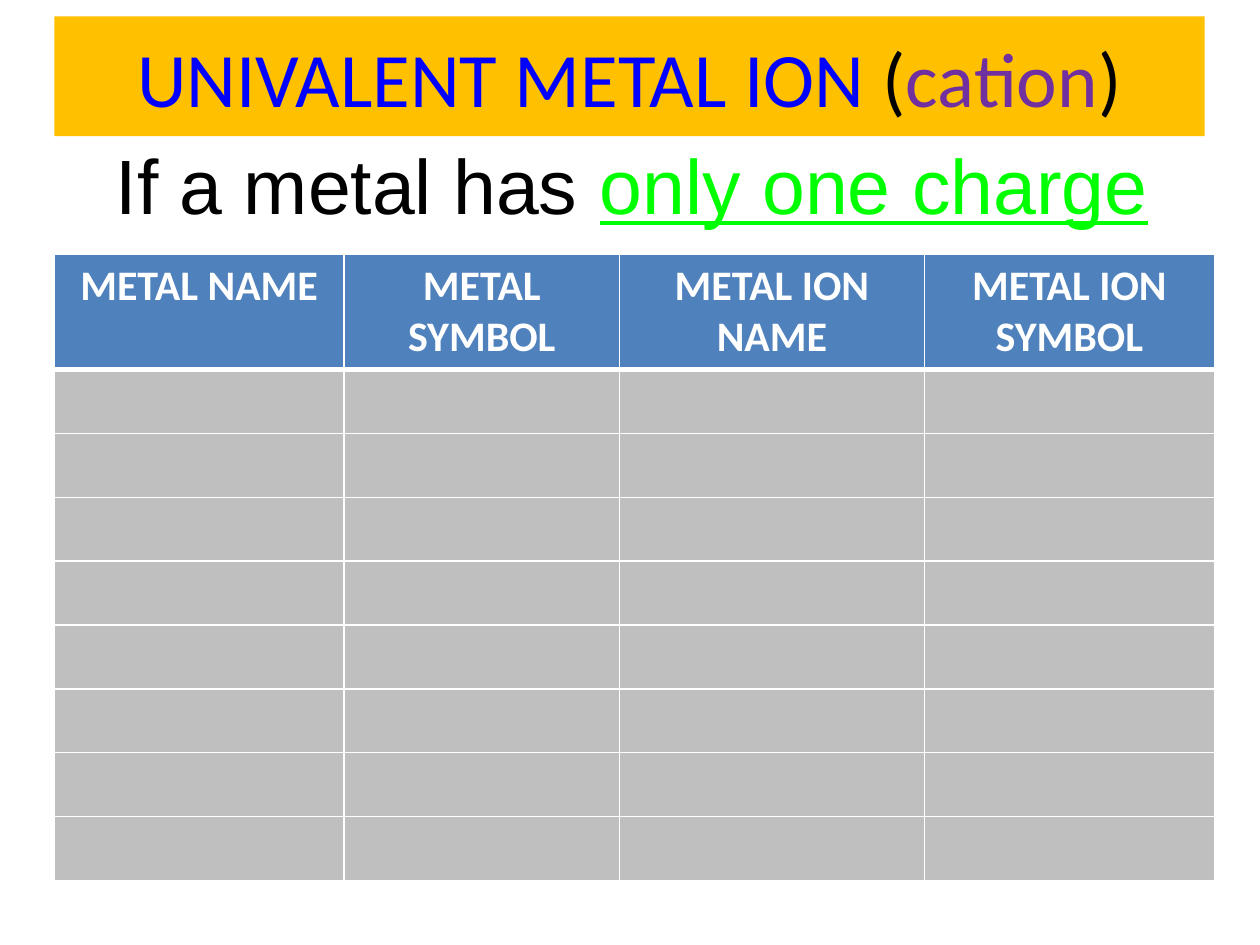
from pptx import Presentation
from pptx.dml.color import RGBColor
from pptx.enum.text import MSO_ANCHOR, PP_ALIGN
from pptx.oxml import parse_xml
from pptx.oxml.ns import nsdecls
from pptx.util import Pt

CENTER = PP_ALIGN.CENTER
MIDDLE = MSO_ANCHOR.MIDDLE
TITLE_ONLY = 5

# Content
TITLE = [("UNIVALENT METAL ION ", "blue"), ("(", "black"),
         ("cation", "purple"), (")", "black")]
STATEMENT = [("If a metal has ", "black", False),
             ("only one charge", "green", True)]
HEADERS = ["METAL NAME", "METAL SYMBOL", "METAL ION NAME", "METAL ION SYMBOL"]
BLANK_ROWS = 8

THEME = {
    "blue": "0000FF", "black": "000000", "purple": "7030A0", "green": "00FF00",
    "white": "FFFFFF", "banner": "FFC000", "header": "4F81BD", "blank": "BFBFBF",
    "heading_font": "Calibri", "statement_font": "Arial",
    "large": 44, "table_size": 24,
}

# Layout, in points
LEFT = 31
TITLE_BOX = (LEFT, 9.4, 657.4, 68.4)
STATEMENT_BOX = (0, 72, 718.6, 66.2)
TABLE_TOP = 145.4
COLUMN_WIDTHS = [165.6, 157.4, 174.2, 165.8]
HEADER_HEIGHT, BLANK_HEIGHT = 65.2, 36.5


def color(name):
    return RGBColor.from_string(THEME[name])


def add_text(para, text, *, font, size, fill, bold=False, underline=False):
    para.alignment = CENTER
    span = para.add_run()
    span.text = text
    span.font.name = THEME[font]
    span.font.size = Pt(THEME[size])
    span.font.bold = bold
    span.font.underline = underline
    span.font.color.rgb = color(fill)


def place(shape, box):
    shape.left, shape.top, shape.width, shape.height = map(Pt, box)


def fill_cell(cell, fill, bottom_width=1, top_width=1):
    """Border lines must come before the fill in the cell properties."""
    properties = cell._tc.get_or_add_tcPr()
    widths = {"lnL": 1, "lnR": 1, "lnT": top_width, "lnB": bottom_width}
    for side, width in widths.items():
        properties.append(parse_xml(
            f'<a:{side} {nsdecls("a")} w="{Pt(width)}"><a:solidFill>'
            f'<a:srgbClr val="{THEME["white"]}"/></a:solidFill></a:{side}>'))
    cell.fill.solid()
    cell.fill.fore_color.rgb = color(fill)


def add_title(page):
    title = page.shapes.title
    place(title, TITLE_BOX)
    title.fill.solid()
    title.fill.fore_color.rgb = color("banner")
    title.text_frame.vertical_anchor = MIDDLE
    for text, fill in TITLE:
        add_text(title.text_frame.paragraphs[0], text,
                 font="heading_font", size="large", fill=fill)


def add_ion_table(page):
    heights = [HEADER_HEIGHT] + [BLANK_HEIGHT] * BLANK_ROWS
    frame = page.shapes.add_table(
        len(heights), len(HEADERS), Pt(LEFT), Pt(TABLE_TOP),
        Pt(sum(COLUMN_WIDTHS)), Pt(sum(heights)))
    table = frame.table
    table.horz_banding = False
    for column, width in zip(table.columns, COLUMN_WIDTHS):
        column.width = Pt(width)
    for index, (row, height) in enumerate(zip(table.rows, heights)):
        row.height = Pt(height)
        for cell, header in zip(row.cells, HEADERS):
            if index == 0:
                fill_cell(cell, "header", bottom_width=3)
                add_text(cell.text_frame.paragraphs[0], header,
                         font="heading_font", size="table_size",
                         fill="white", bold=True)
            else:
                fill_cell(cell, "blank", top_width=3 if index == 1 else 1)


def add_statement(page):
    box = page.shapes.add_textbox(*map(Pt, STATEMENT_BOX))
    frame = box.text_frame
    frame.word_wrap = True
    frame.vertical_anchor = MIDDLE
    frame.margin_left = Pt(10.8)
    for text, fill, underline in STATEMENT:
        add_text(frame.paragraphs[0], text, font="statement_font",
                 size="large", fill=fill, underline=underline)


def main():
    deck = Presentation()
    deck.slide_width, deck.slide_height = Pt(720), Pt(540)
    page = deck.slides.add_slide(deck.slide_layouts[TITLE_ONLY])
    add_title(page)
    add_ion_table(page)
    add_statement(page)
    deck.save("out.pptx")


if __name__ == "__main__":
    main()
